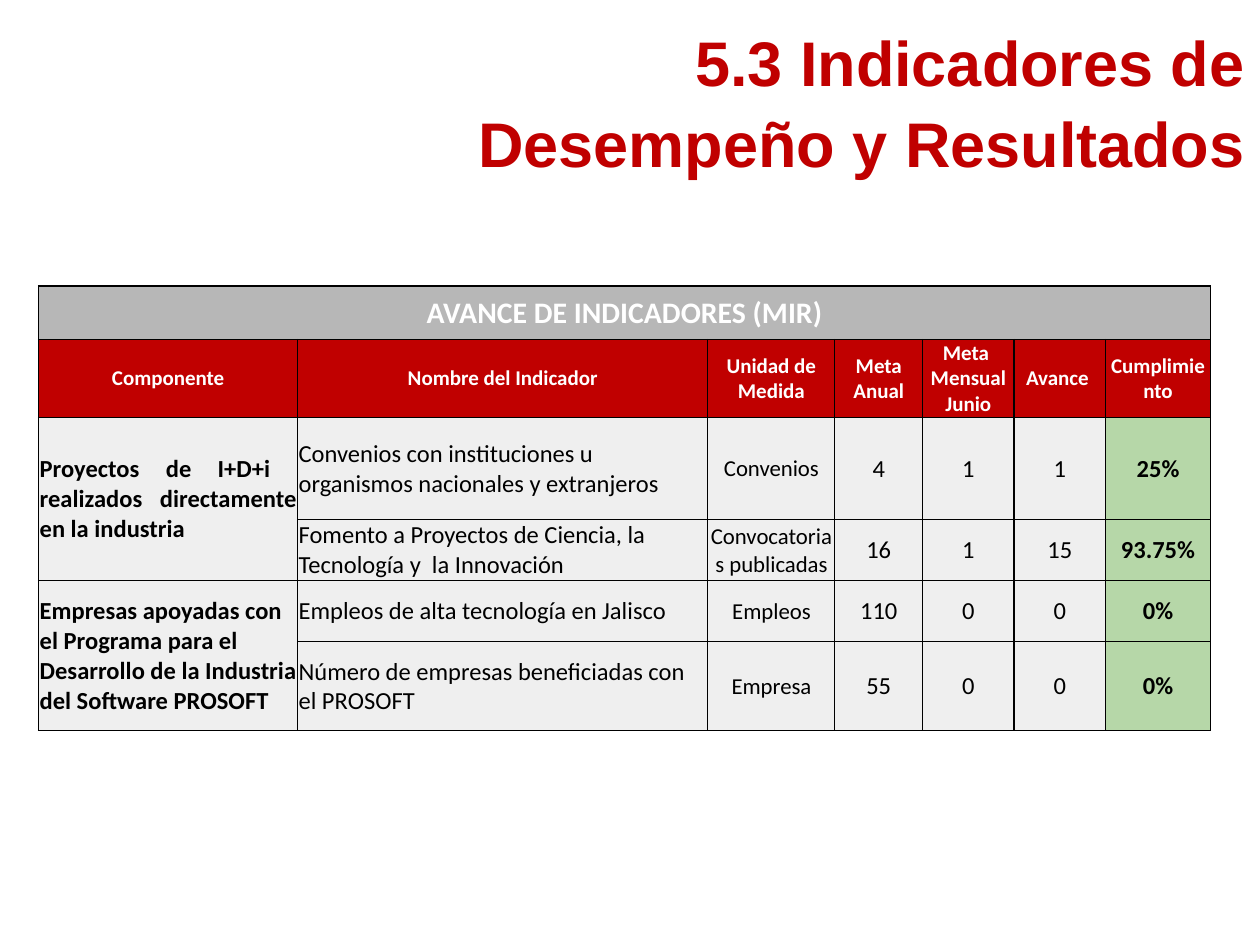
from lxml.etree import SubElement
from pptx import Presentation
from pptx.dml.color import RGBColor
from pptx.enum.text import MSO_ANCHOR, MSO_AUTO_SIZE, PP_ALIGN
from pptx.oxml.ns import qn
from pptx.util import Cm, Pt

COLORS = {
    "red": "C00000",
    "gray": "B7B7B7",
    "light": "EFEFEF",
    "green": "B6D7A8",
    "white": "FFFFFF",
    "black": "000000",
}
TITLE = "5.3 Indicadores de Desempeño y Resultados"
BANNER = "AVANCE DE INDICADORES (MIR)"
HEADERS = ["Componente", "Nombre del Indicador", "Unidad de Medida", "Meta Anual",
           "Meta \nMensual\nJunio", "Avance ", "Cumplimiento"]
# Component, its text alignment, and its indicators
COMPONENTS = [
    ("Proyectos de I+D+i  realizados directamente en la industria", PP_ALIGN.JUSTIFY, [
        ("Convenios con instituciones u organismos nacionales y extranjeros",
         "Convenios", "4", "1", "1", "25%"),
        ("Fomento a Proyectos de Ciencia, la Tecnología y  la Innovación",
         "Convocatorias publicadas", "16", "1", "15", "93.75%"),
    ]),
    ("Empresas apoyadas con el Programa para el Desarrollo de la Industria del Software PROSOFT",
     PP_ALIGN.LEFT, [
         ("Empleos de alta tecnología en Jalisco", "Empleos", "110", "0", "0", "0%"),
         ("Número de empresas beneficiadas con el PROSOFT", "Empresa", "55", "0", "0", "0%"),
     ]),
]
COLUMN_WIDTHS = [5.22, 8.27, 2.56, 1.77, 1.84, 1.85, 2.11]
ROW_HEIGHTS = [1.07, 1.57, 2.06, 1.23, 1.23, 1.8]
LAST_COLUMN = len(COLUMN_WIDTHS) - 1


def color(name):
    return RGBColor.from_string(COLORS[name])


def style_runs(paragraph, font_name, size, color_name, bold):
    for run in paragraph.runs:
        run.font.name = font_name
        run.font.size = Pt(size)
        run.font.bold = bold
        run.font.color.rgb = color(color_name)


def add_borders(cell, row, column):
    """Draw thin inner lines and slightly thicker left, right and top edges."""
    properties = cell._tc.get_or_add_tcPr()
    outer_sides = {"lnL": column == 0, "lnR": column == LAST_COLUMN or row == 0,
                   "lnT": row == 0, "lnB": False}
    for position, (side, is_outer) in enumerate(outer_sides.items()):
        line = properties.makeelement(qn(f"a:{side}"), w=str(Pt(1 if is_outer else 0.75)))
        fill = SubElement(line, qn("a:solidFill"))
        SubElement(fill, qn("a:srgbClr"), val=COLORS["black"])
        properties.insert(position, line)


def write_cell(cell, text, fill, size, font_color="black", bold=False,
               alignment=PP_ALIGN.CENTER):
    cell.text_frame.text = text
    cell.vertical_anchor = MSO_ANCHOR.MIDDLE
    cell.margin_left = cell.margin_right = cell.margin_top = Cm(0.02)
    cell.margin_bottom = 0
    cell.fill.solid()
    cell.fill.fore_color.rgb = color(fill)
    for paragraph in cell.text_frame.paragraphs:
        paragraph.alignment = alignment
        style_runs(paragraph, "Calibri", size, font_color, bold)


def add_title(slide):
    title = slide.shapes.title
    title.left, title.top, title.width, title.height = Cm(6.86), Cm(0.25), Cm(18.49), Cm(1.37)
    text_frame = title.text_frame
    text_frame.text = TITLE
    text_frame.word_wrap = True
    text_frame.auto_size = MSO_AUTO_SIZE.NONE
    text_frame.vertical_anchor = MSO_ANCHOR.TOP
    paragraph = text_frame.paragraphs[0]
    paragraph.alignment = PP_ALIGN.RIGHT
    paragraph.line_spacing = 1.07
    paragraph.space_before = Pt(0)
    style_runs(paragraph, "Arial", 36, "red", True)


def add_indicator_table(slide):
    table = slide.shapes.add_table(
        len(ROW_HEIGHTS), len(COLUMN_WIDTHS), Cm(0.78), Cm(5.77),
        Cm(sum(COLUMN_WIDTHS)), Cm(sum(ROW_HEIGHTS))).table
    for column, width in zip(table.columns, COLUMN_WIDTHS):
        column.width = Cm(width)
    for row, height in zip(table.rows, ROW_HEIGHTS):
        row.height = Cm(height)

    table.cell(0, 0).merge(table.cell(0, LAST_COLUMN))
    write_cell(table.cell(0, 0), BANNER, "gray", 17, "white", True)
    for column, header in enumerate(HEADERS):
        write_cell(table.cell(1, column), header, "red", 12, "white", True)

    row = 2
    for component, alignment, indicators in COMPONENTS:
        component_cell = table.cell(row, 0)
        component_cell.merge(table.cell(row + len(indicators) - 1, 0))
        write_cell(component_cell, component, "light", 14, bold=True, alignment=alignment)
        for name, unit, *goals, compliance in indicators:
            write_cell(table.cell(row, 1), name, "light", 14, alignment=PP_ALIGN.LEFT)
            write_cell(table.cell(row, 2), unit, "light", 13)
            for column, goal in enumerate(goals, start=3):
                write_cell(table.cell(row, column), goal, "light", 14)
            write_cell(table.cell(row, LAST_COLUMN), compliance, "green", 14, bold=True)
            row += 1

    for row in range(len(ROW_HEIGHTS)):
        for column in range(len(COLUMN_WIDTHS)):
            add_borders(table.cell(row, column), row, column)


def main():
    presentation = Presentation()
    presentation.slide_width, presentation.slide_height = Cm(25.4), Cm(19.05)
    slide = presentation.slides.add_slide(presentation.slide_layouts[5])
    add_title(slide)
    add_indicator_table(slide)
    presentation.save("out.pptx")


if __name__ == "__main__":
    main()
